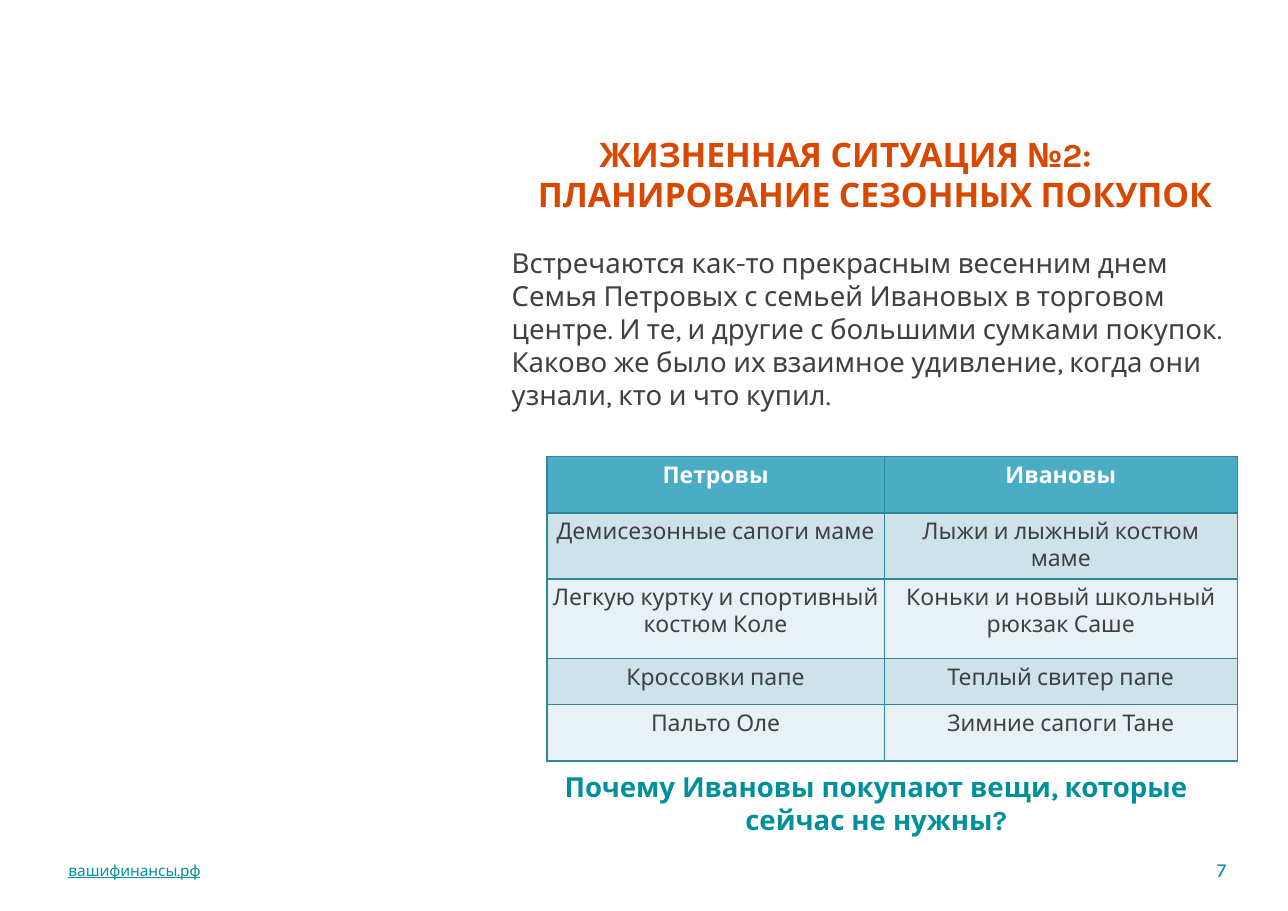
from dataclasses import dataclass

from lxml.etree import SubElement
from pptx import Presentation
from pptx.dml.color import RGBColor
from pptx.enum.text import MSO_ANCHOR, PP_ALIGN
from pptx.oxml.ns import qn
from pptx.util import Inches, Pt


@dataclass(frozen=True)
class Theme:
    """Font, colours and type sizes of the deck."""
    font: str = "Karla"
    accent: str = "D84800"
    teal: str = "00909B"
    ink: str = "404040"
    white: str = "FFFFFF"
    header: str = "4BACC6"
    bands: tuple = ("CEE2EA", "E8F1F5")
    border: str = "31859C"
    title_size: int = 22
    body_size: int = 18
    table_size: int = 15
    number_size: int = 13
    link_size: int = 10
    inset: float = 0.05


THEME = Theme()

PURCHASES = [
    ("Петровы", "Ивановы"),
    ("Демисезонные сапоги маме", "Лыжи и лыжный костюм маме"),
    ("Легкую куртку и спортивный костюм Коле", "Коньки и новый школьный рюкзак Саше"),
    ("Кроссовки папе", "Теплый свитер папе"),
    ("Пальто Оле", "Зимние сапоги Тане"),
]
COLUMN_WIDTHS = (3.06, 3.2)
ROW_HEIGHTS = (0.51, 0.42, 0.72, 0.42, 0.51)


def write_text(frame, text, size, color, bold=False, underline=False, align=PP_ALIGN.LEFT):
    """Write one formatted paragraph into a text frame."""
    para = frame.paragraphs[0]
    para.alignment = align
    span = para.add_run()
    span.text = text
    font = span.font
    font.name, font.size = THEME.font, Pt(size)
    font.bold, font.underline = bold, underline
    font.color.rgb = RGBColor.from_string(color)


def set_margins(target):
    """Give a text frame or a table cell the common inset."""
    target.margin_left = target.margin_right = Inches(THEME.inset)
    target.margin_top = target.margin_bottom = Inches(THEME.inset)


def add_text(page, box, text, anchor=MSO_ANCHOR.TOP, wrap=True, **text_format):
    """Place a text box in the given box of inches."""
    frame = page.shapes.add_textbox(*map(Inches, box)).text_frame
    frame.word_wrap = wrap
    frame.vertical_anchor = anchor
    set_margins(frame)
    write_text(frame, text, **text_format)


def add_borders(cell):
    """Draw a thin line on all four sides of a cell."""
    properties = cell._tc.get_or_add_tcPr()
    for position, side in enumerate(("lnL", "lnR", "lnT", "lnB")):
        line = SubElement(properties, qn(f"a:{side}"), w=str(Pt(1)))
        fill = SubElement(line, qn("a:solidFill"))
        SubElement(fill, qn("a:srgbClr"), val=THEME.border)
        properties.insert(position, line)


def add_purchases(page, box):
    """Place the table of what each family bought."""
    table = page.shapes.add_table(len(PURCHASES), len(COLUMN_WIDTHS), *map(Inches, box)).table
    for column, width in zip(table.columns, COLUMN_WIDTHS):
        column.width = Inches(width)
    for index, (row, height) in enumerate(zip(table.rows, ROW_HEIGHTS)):
        row.height = Inches(height)
        is_header = index == 0
        fill = THEME.header if is_header else THEME.bands[(index - 1) % 2]
        color = THEME.white if is_header else THEME.ink
        for cell, text in zip(row.cells, PURCHASES[index]):
            cell.fill.solid()
            cell.fill.fore_color.rgb = RGBColor.from_string(fill)
            set_margins(cell)
            add_borders(cell)
            write_text(cell.text_frame, text, THEME.table_size, color,
                       bold=is_header, align=PP_ALIGN.CENTER)


def add_story(page, box):
    """Place the heading, the story, the table and the closing question."""
    left, top, width, height = box
    add_text(page, (left - 0.09, top, width + 0.16, 0.99),
             "ЖИЗНЕННАЯ СИТУАЦИЯ №2: \tПЛАНИРОВАНИЕ СЕЗОННЫХ ПОКУПОК",
             size=THEME.title_size, color=THEME.accent, bold=True, align=PP_ALIGN.CENTER)
    add_text(page, (left, top + 1.02, width, 1.7),
             "Встречаются как-то прекрасным весенним днем Семья Петровых с семьей "
             "Ивановых в торговом центре. И те, и другие с большими сумками покупок. "
             "Каково же было их взаимное удивление, когда они узнали, кто и что купил.",
             size=THEME.body_size, color=THEME.ink)
    add_purchases(page, (left + 0.37, top + 2.98, sum(COLUMN_WIDTHS), sum(ROW_HEIGHTS)))
    add_text(page, (left, top + height - 0.8, width, 0.8),
             "Почему Ивановы покупают вещи, которые сейчас не нужны?",
             size=THEME.body_size, color=THEME.teal, bold=True, align=PP_ALIGN.CENTER)


def add_footer(page, box):
    """Place the site address on the left and the page number on the right."""
    left, top, width, height = box
    add_text(page, (left, top + 0.03, 3.97, 0.28), "вашифинансы.рф",
             anchor=MSO_ANCHOR.MIDDLE, size=THEME.link_size, color=THEME.teal, underline=True)
    add_text(page, (left + width - 0.22, top, 0.22, height), "7",
             anchor=MSO_ANCHOR.MIDDLE, wrap=False, size=THEME.number_size,
             color=THEME.teal, align=PP_ALIGN.RIGHT)


def main():
    """Build the deck and save it."""
    deck = Presentation()
    deck.slide_width, deck.slide_height = Inches(11.68), Inches(8.26)
    page = deck.slides.add_slide(deck.slide_layouts[6])
    add_story(page, (4.59, 1.16, 6.71, 6.57))
    add_footer(page, (0.57, 7.72, 10.6, 0.33))
    deck.save("out.pptx")


if __name__ == "__main__":
    main()
